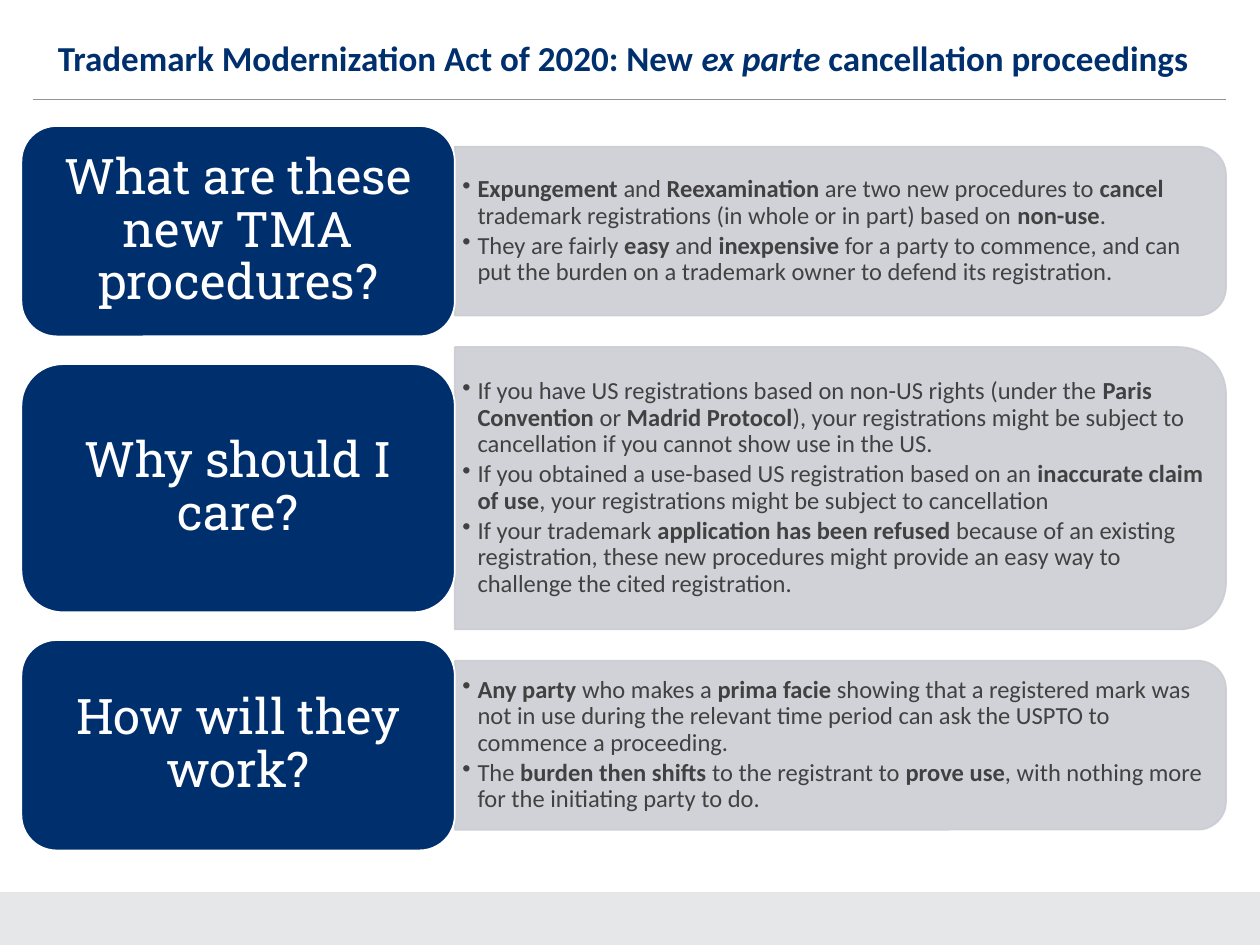
from lxml.etree import SubElement
from pptx import Presentation
from pptx.dml.color import RGBColor
from pptx.enum.shapes import MSO_CONNECTOR, MSO_SHAPE as Shape
from pptx.enum.text import MSO_ANCHOR as Anchor, PP_ALIGN as Align
from pptx.oxml.ns import qn
from pptx.util import Inches, Pt

TITLE = ["Trademark Modernization Act of 2020: New ", "ex parte", " cancellation proceedings"]
ROWS = [
    ("What are these new TMA procedures?", 1.67, 1.34, [
        "**Expungement **and **Reexamination **are two new procedures to **cancel **trademark "
        "registrations (in whole or in part) based on **non-use**.",
        "They are fairly **easy** and **inexpensive** for a party to commence, and can put the "
        "burden on a trademark owner to defend its registration.",
    ]),
    ("Why should I care?", 1.97, 2.24, [
        "If you have US registrations based on non-US rights (under the **Paris Convention** or "
        "**Madrid Protocol**), your registrations might be subject to cancellation if you cannot "
        "show use in the US.",
        "If you obtained a use-based US registration based on an **inaccurate claim of use**, "
        "your registrations might be subject to cancellation",
        "If your trademark **application has been refused **because of an existing registration, "
        "these new procedures might provide an easy way to challenge the cited registration.",
    ]),
    ("How will they work?", 1.67, 1.34, [
        "**Any party** who makes a **prima facie **showing that a registered mark was not in use "
        "during the relevant time period can ask the USPTO to commence a proceeding.",
        "The **burden then shifts **to the registrant to **prove use**, with nothing more for the "
        "initiating party to do.",
    ]),
]
NAVY, PANEL, TEXT, WHITE, FOOTER, RULE = "002F6D", "CCCDD4", "414141", "FFFFFF", "E6E7E8", "939598"
WIDTH, HEIGHT = 10, 7.5
LEFT, TOP, GAP = 0.17, 1, 0.22
HEADING_WIDTH, PANEL_WIDTH = 3.44, 6.12
PANEL_LEFT = LEFT + HEADING_WIDTH


def color(value):
    return RGBColor.from_string(value)


def add_shape(slide, kind, left, top, width, height, fill, line=None):
    shape = slide.shapes.add_shape(kind, *map(Inches, (left, top, width, height)))
    shape.shadow.inherit = False
    shape.fill.solid()
    shape.fill.fore_color.rgb = color(fill)
    if line:
        shape.line.color.rgb = color(line)
        shape.line.width = Pt(1)
    else:
        shape.line.fill.background()
    return shape


def set_frame(box, side, edge):
    frame = box.text_frame
    frame.word_wrap = True
    frame.vertical_anchor = Anchor.MIDDLE
    frame.margin_left = frame.margin_right = Inches(side)
    frame.margin_top = frame.margin_bottom = Inches(edge)
    return frame


def style(para, font, size, fill, align=Align.LEFT):
    para.alignment = align
    para.line_spacing = 0.9
    para.font.name = font
    para.font.size = Pt(size)
    para.font.color.rgb = color(fill)


def add_title(slide):
    box = slide.shapes.add_textbox(*map(Inches, (LEFT, 0.12, 9.55, 0.71)))
    para = set_frame(box, 0.1, 0.05).paragraphs[0]
    style(para, "Calibri", 20, NAVY, Align.CENTER)
    para.font.bold = True
    for index, text in enumerate(TITLE):
        span = para.add_run()
        span.text = text
        span.font.italic = index == 1
    rule = slide.shapes.add_connector(MSO_CONNECTOR.STRAIGHT, *map(Inches, (0.26, 0.79, 9.73, 0.79)))
    rule.line.color.rgb = color(RULE)
    rule.line.width = Pt(0.75)
    SubElement(rule._element.spPr, qn("a:effectLst"))


def add_panel(slide, middle, height):
    center = PANEL_LEFT + PANEL_WIDTH / 2
    panel = add_shape(slide, Shape.ROUND_2_SAME_RECTANGLE, center - height / 2,
                      middle - PANEL_WIDTH / 2, height, PANEL_WIDTH, PANEL, PANEL)
    panel.rotation = 90
    for tint in panel._element.spPr.iter(qn("a:srgbClr")):
        SubElement(tint, qn("a:alpha"), val="90000")


def add_bullets(slide, middle, height, bullets):
    box = slide.shapes.add_textbox(*map(Inches, (PANEL_LEFT, middle - height / 2, 6.05, height)))
    frame = set_frame(box, 0.06, 0.03)
    for index, bullet in enumerate(bullets):
        para = frame.add_paragraph() if index else frame.paragraphs[0]
        props = para._p.get_or_add_pPr()
        props.set("marL", str(Inches(0.12)))
        props.set("indent", str(-Inches(0.12)))
        SubElement(props, qn("a:buChar"), char="•")
        style(para, "Calibri", 14, TEXT)
        para.space_after = Pt(2)
        for part, text in enumerate(bullet.split("**")):
            if text:
                span = para.add_run()
                span.text = text
                span.font.bold = part % 2 == 1


def add_heading(slide, top, height, text):
    box = add_shape(slide, Shape.ROUNDED_RECTANGLE, LEFT, top, HEADING_WIDTH, height, NAVY, WHITE)
    para = set_frame(box, 0.12, 0.06).paragraphs[0]
    para.text = text
    style(para, "Roboto Slab", 28, WHITE, Align.CENTER)


def main():
    deck = Presentation()
    deck.slide_width, deck.slide_height = Inches(WIDTH), Inches(HEIGHT)
    slide = deck.slides.add_slide(deck.slide_layouts[6])
    add_shape(slide, Shape.RECTANGLE, 0, 7.08, WIDTH, HEIGHT - 7.08, FOOTER)
    add_title(slide)
    top = TOP
    for heading, height, panel_height, bullets in ROWS:
        middle = top + height / 2
        add_panel(slide, middle, panel_height)
        add_bullets(slide, middle, panel_height, bullets)
        add_heading(slide, top, height, heading)
        top += height + GAP
    deck.save("out.pptx")


if __name__ == "__main__":
    main()
